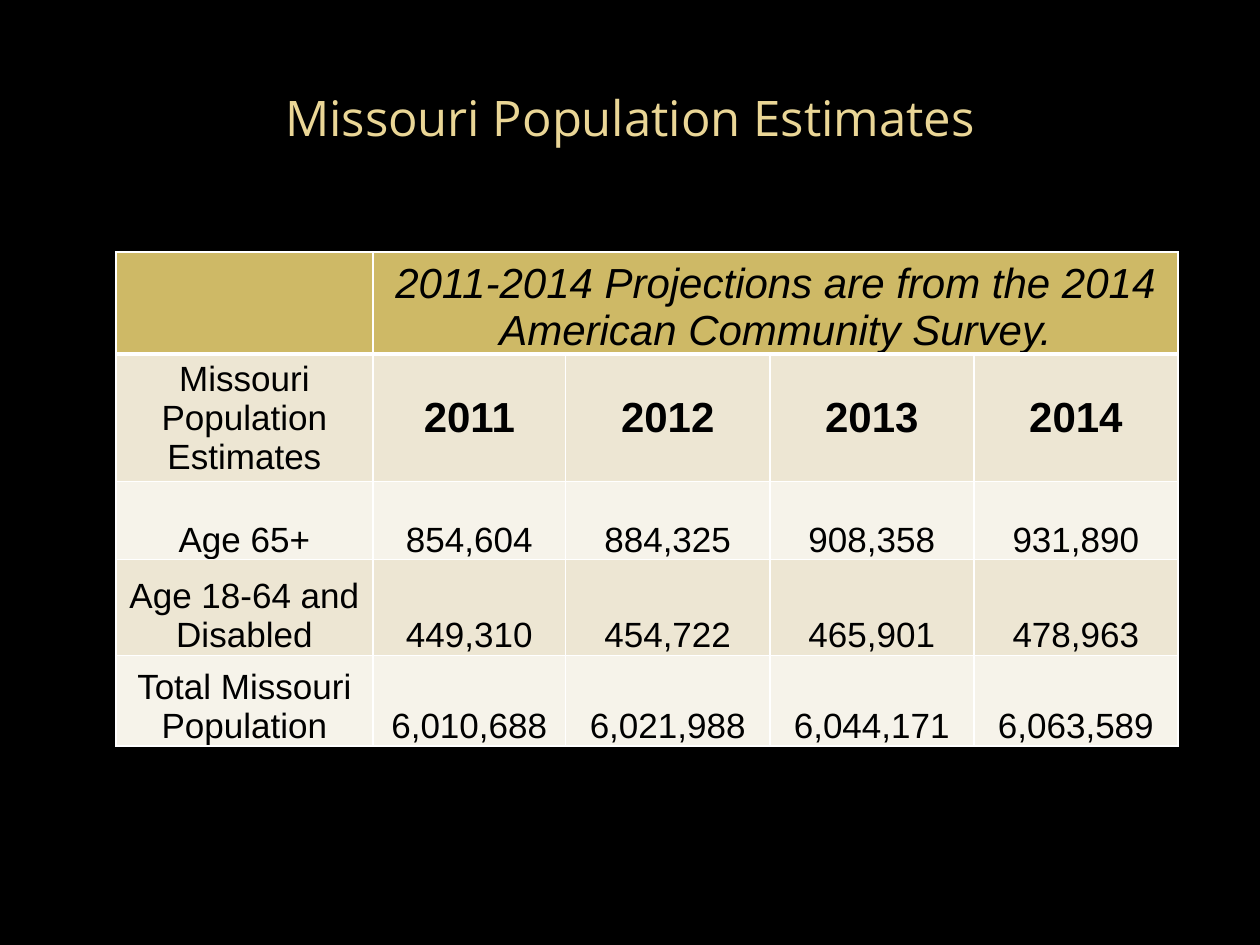
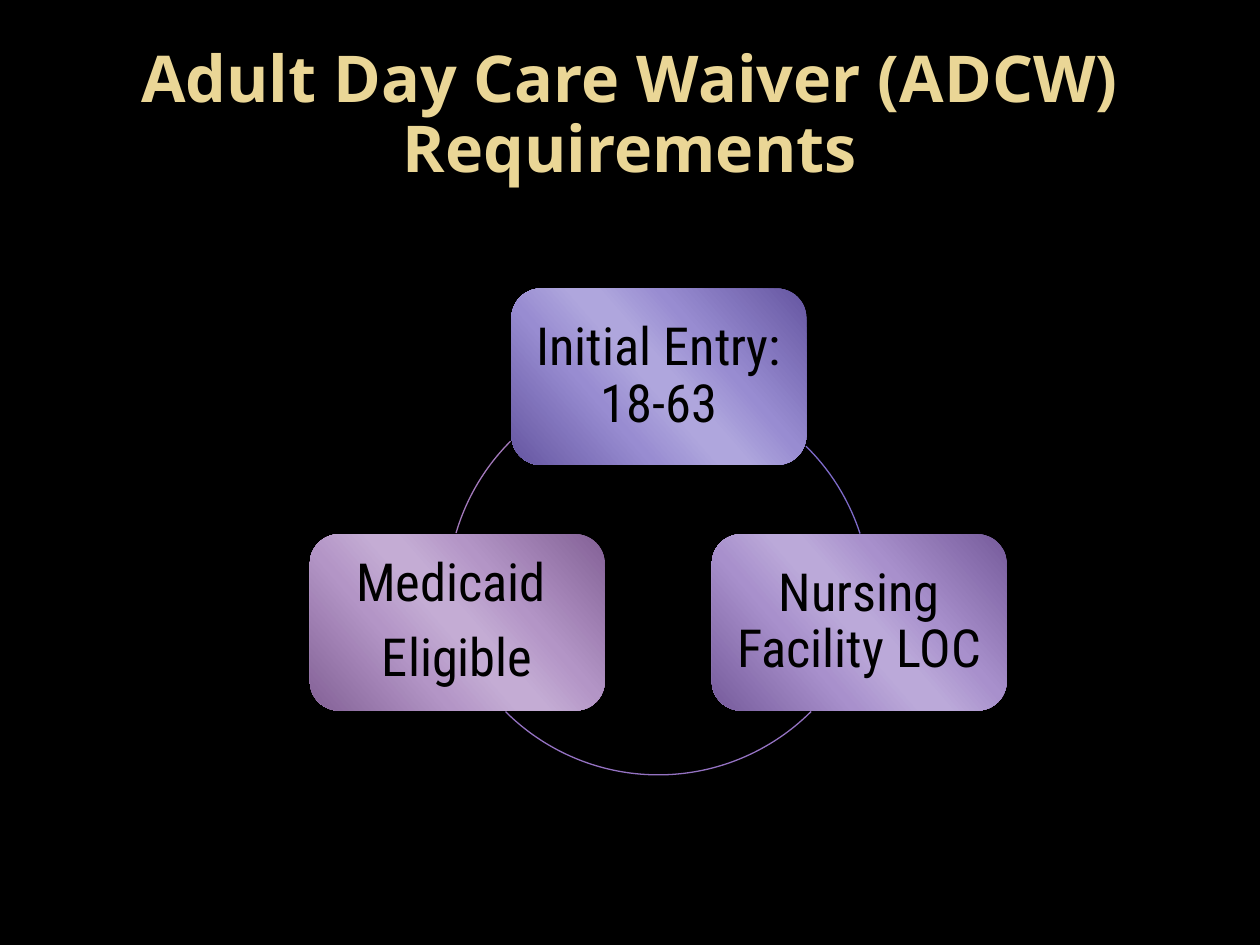
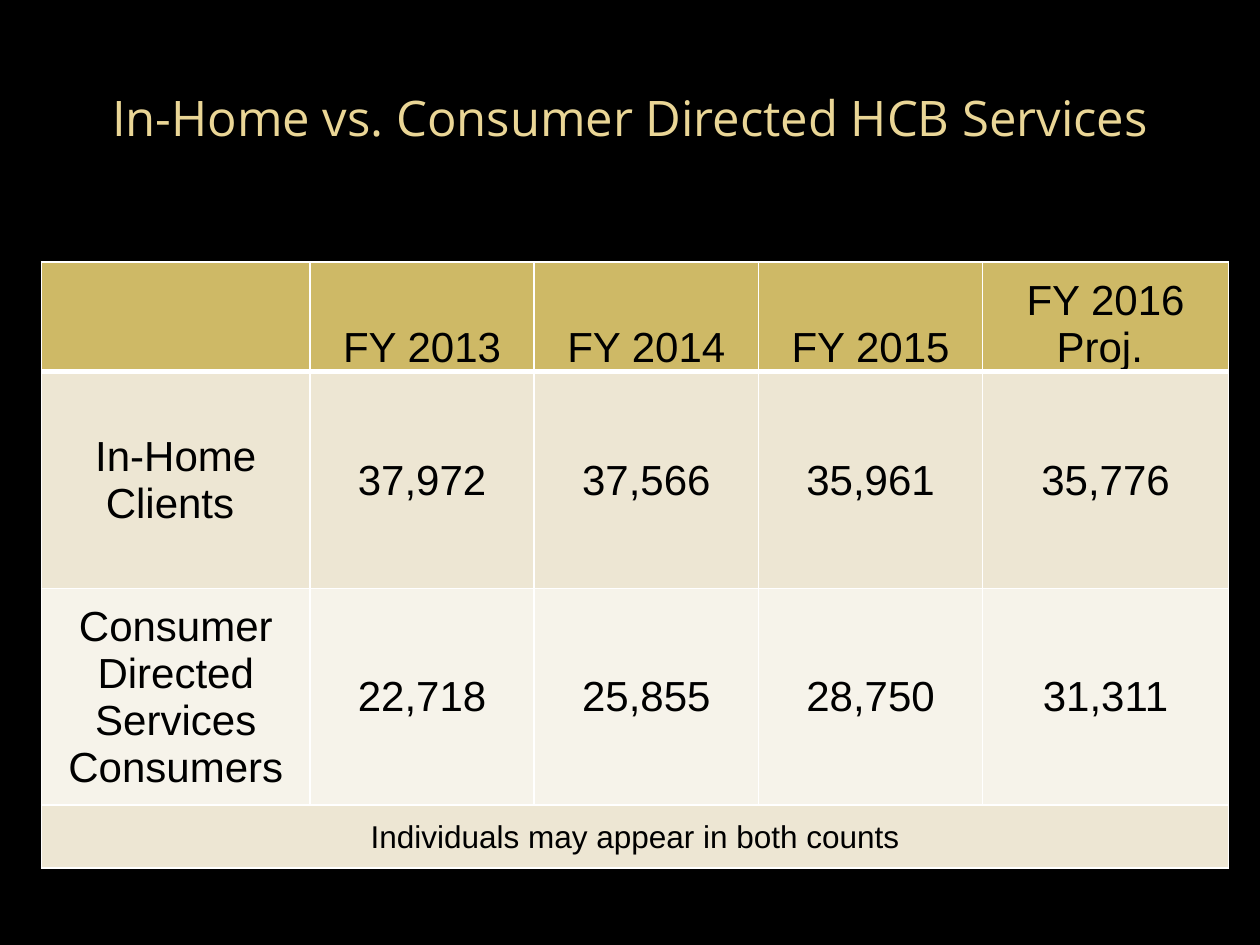
from lxml.etree import SubElement
from pptx import Presentation
from pptx.dml.color import RGBColor
from pptx.enum.shapes import MSO_SHAPE
from pptx.enum.text import MSO_ANCHOR, PP_ALIGN
from pptx.oxml import parse_xml
from pptx.oxml.ns import nsdecls, qn
from pptx.util import Inches, Pt

BLACK = RGBColor(0x00, 0x00, 0x00)
WHITE = RGBColor(0xFF, 0xFF, 0xFF)
CREAM = RGBColor(0xEA, 0xD6, 0x96)
GOLD = RGBColor(0xCE, 0xB9, 0x66)
SAND = RGBColor(0xED, 0xE6, 0xD3)
IVORY = RGBColor(0xF6, 0xF3, 0xEA)

INDIGO = [RGBColor.from_string(c) for c in ("6556A1", "988CD1", "AFA6DD")]
VIOLET = [RGBColor.from_string(c) for c in ("765B9B", "A890CC", "BBA9D9")]
MAUVE = [RGBColor.from_string(c) for c in ("836196", "B395C6", "C4ACD4")]
INDIGO_LINE = RGBColor(0x7E, 0x6B, 0xC9)
VIOLET_LINE = RGBColor(0x94, 0x72, 0xC2)
MAUVE_LINE = RGBColor(0xA3, 0x79, 0xBB)

COLS, ROWS = 100, 75
BODY_FONT = "Arial"
TITLE_FONT = "Open Sans"
NODE_FONT = "Roboto Condensed"
SHEEN = ((0, 0), (33, 1), (47, 2), (53, 2), (68, 1), (100, 0))


def write(tf, text, size=20, font=BODY_FONT, color=BLACK, bold=False,
          italic=False, spacing=None, after=0):
    for i, line in enumerate(text.split("\n")):
        p = tf.add_paragraph() if i else tf.paragraphs[0]
        p.alignment = PP_ALIGN.CENTER
        p.space_after = Pt(after)
        if spacing:
            p.line_spacing = spacing
        r = p.add_run()
        r.text = line
        f = r.font
        f.name, f.size, f.bold, f.italic = font, Pt(size), bold, italic
        f.color.rgb = color


class Deck:
    def __init__(self):
        self.prs = Presentation()
        self.prs.slide_width, self.prs.slide_height = Inches(10), Inches(7.5)
        self.s = None

    def x(self, cols):
        return round(self.prs.slide_width * cols / COLS)

    def y(self, rows):
        return round(self.prs.slide_height * rows / ROWS)

    def box(self, left, top, width, height):
        return self.x(left), self.y(top), self.x(width), self.y(height)

    def slide(self, title, **fmt):
        self.s = self.prs.slides.add_slide(self.prs.slide_layouts[6])
        fill = self.s.background.fill
        fill.solid()
        fill.fore_color.rgb = BLACK
        tf = self.s.shapes.add_textbox(*self.box(5, 3, 90, 12.5)).text_frame
        tf.word_wrap = True
        tf.vertical_anchor = MSO_ANCHOR.MIDDLE
        write(tf, title, **{"size": 28, "font": TITLE_FONT, "color": CREAM, **fmt})

    def borders(self, cell, top, bottom):
        tcPr = cell._tc.get_or_add_tcPr()
        for i, (side, width) in enumerate(
                (("L", 1), ("R", 1), ("T", top), ("B", bottom))):
            tcPr.insert(i, parse_xml(
                f'<a:ln{side} {nsdecls("a")} w="{Pt(width)}"><a:solidFill>'
                f'<a:srgbClr val="{WHITE}"/></a:solidFill></a:ln{side}>'))

    def table(self, left, top, widths, heights, rows, merge, cell_format):
        box = self.box(left, top, sum(widths), sum(heights))
        t = self.s.shapes.add_table(len(heights), len(widths), *box).table
        t.first_row = t.horz_banding = False
        for col, width in zip(t.columns, widths):
            col.width = self.x(width)
        for row, height in zip(t.rows, heights):
            row.height = self.y(height)
        for i, row in enumerate(rows):
            for j in range(len(widths)):
                cell = t.cell(i, j)
                cell.margin_left = cell.margin_right = cell.margin_top = Inches(0.01)
                cell.margin_bottom = 0
                cell.fill.solid()
                cell.fill.fore_color.rgb = GOLD if i == 0 else SAND if i % 2 else IVORY
                self.borders(cell, 3 if i == 1 else 1, 3 if i == 0 else 1)
                if j < len(row) and row[j]:
                    anchor, fmt = cell_format(i, j)
                    cell.vertical_anchor = anchor
                    write(cell.text_frame, row[j], **fmt)
        row, first, last = merge
        t.cell(row, first).merge(t.cell(row, last))

    def arc(self, left, top, size, start, end, color):
        sp = self.s.shapes.add_shape(MSO_SHAPE.ARC, *self.box(left, top, size, size))
        sp.shadow.inherit = False
        sp.adjustments[0], sp.adjustments[1] = start * 0.6, end * 0.6
        sp.fill.background()
        sp.line.color.rgb = color
        sp.line.width = Pt(0.75)

    def node(self, left, top, text, shades):
        sp = self.s.shapes.add_shape(
            MSO_SHAPE.ROUNDED_RECTANGLE, *self.box(left, top, 23.4, 14))
        sp.shadow.inherit = False
        sp.line.fill.background()
        sp.fill.gradient()
        sp.fill.gradient_angle = 221
        stops = next(sp.element.iter(qn("a:gsLst")))
        for gs in list(stops):
            stops.remove(gs)
        for pos, shade in SHEEN:
            gs = SubElement(stops, qn("a:gs"), pos=str(pos * 1000))
            SubElement(gs, qn("a:srgbClr"), val=str(shades[shade]))
        tf = sp.text_frame
        tf.word_wrap = True
        tf.vertical_anchor = MSO_ANCHOR.MIDDLE
        tf.margin_left = tf.margin_right = Inches(0.12)
        tf.margin_top = tf.margin_bottom = Inches(0.12)
        write(tf, text, size=30, font=NODE_FONT, spacing=0.9, after=10.5)


def population_format(i, j):
    if i == 0:
        return MSO_ANCHOR.BOTTOM, {"size": 24, "italic": True}
    if i == 1:
        return MSO_ANCHOR.MIDDLE, {"size": 24, "bold": True} if j else {}
    return MSO_ANCHOR.BOTTOM, {}


def services_format(i, j):
    anchor = MSO_ANCHOR.MIDDLE if i else MSO_ANCHOR.BOTTOM
    return anchor, {"size": 18 if i == 3 else 24}


def main():
    deck = Deck()

    deck.slide("Missouri Population Estimates")
    deck.table(
        9.2, 20, [20.4, 15.3, 16.2, 16.2, 16.2], [7.8, 9.7, 6.2, 7.6, 7.2],
        [["", "2011-2014 Projections are from the 2014 American Community Survey."],
         ["Missouri Population Estimates", "2011", "2012", "2013", "2014"],
         ["Age 65+", "854,604", "884,325", "908,358", "931,890"],
         ["Age 18-64 and Disabled", "449,310", "454,722", "465,901", "478,963"],
         ["Total Missouri Population", "6,010,688", "6,021,988", "6,044,171",
          "6,063,589"]],
        (0, 1, 4), population_format)

    deck.slide("Adult Day Care Waiver (ADCW) Requirements",
               size=36.9, bold=True, spacing=0.9)
    deck.arc(34.8, 30.5, 34.3, 314.5, 342, INDIGO_LINE)
    deck.arc(35.1, 27.2, 34.3, 45, 135, VIOLET_LINE)
    deck.arc(35.5, 30, 34.3, 196.4, 225, MAUVE_LINE)
    deck.node(40.6, 22.9, "Initial Entry: 18-63", INDIGO)
    deck.node(56.5, 42.4, "Nursing Facility LOC", VIOLET)
    deck.node(24.6, 42.4, "Medicaid \nEligible", MAUVE)

    deck.slide("In-Home vs. Consumer Directed HCB Services")
    deck.table(
        3.3, 20.8, [21.3, 17.8, 17.8, 17.8, 19.5], [8.7, 17.2, 17.2, 5],
        [["", "FY 2013", "FY 2014", "FY 2015", "FY 2016 Proj. "],
         ["In-Home Clients ", "37,972", "37,566", "35,961", "35,776"],
         ["Consumer Directed Services Consumers", "22,718", "25,855", "28,750",
          "31,311"],
         ["Individuals may appear in both counts"]],
        (3, 0, 4), services_format)

    deck.prs.save("out.pptx")


if __name__ == "__main__":
    main()
